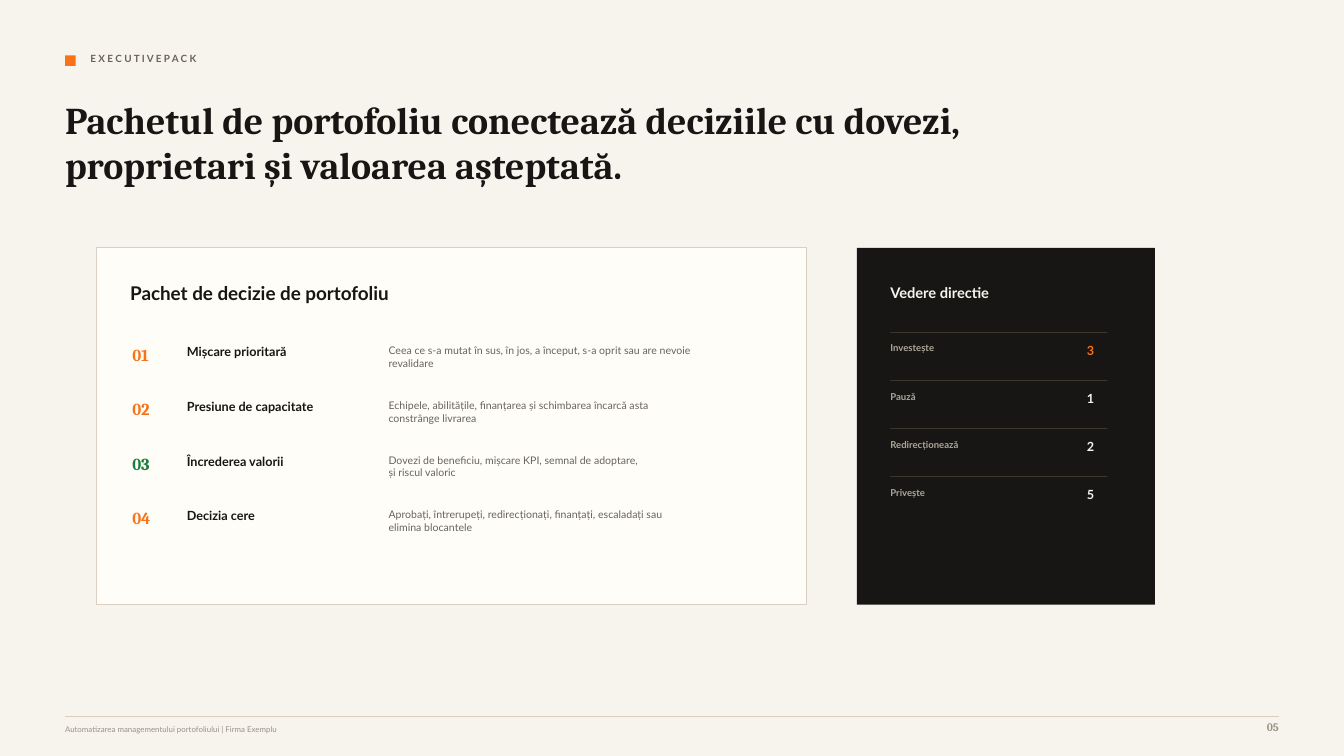
from lxml.etree import SubElement
from pptx import Presentation
from pptx.dml.color import RGBColor
from pptx.enum.shapes import MSO_CONNECTOR, MSO_SHAPE
from pptx.enum.text import MSO_ANCHOR, MSO_AUTO_SIZE, PP_ALIGN
from pptx.oxml.ns import qn
from pptx.util import Pt

PAPER = RGBColor(0xF7, 0xF4, 0xEE)
CARD = RGBColor(0xFF, 0xFD, 0xF8)
INK = RGBColor(0x17, 0x16, 0x14)
ORANGE = RGBColor(0xF9, 0x73, 0x16)
GREEN = RGBColor(0x15, 0x80, 0x3D)
BROWN = RGBColor(0x69, 0x63, 0x5A)
SAND = RGBColor(0xD9, 0xD0, 0xC3)
UMBER = RGBColor(0x3C, 0x36, 0x2E)
STONE = RGBColor(0xAF, 0xA7, 0x9B)
TAUPE = RGBColor(0x9A, 0x91, 0x84)
SERIF, SANS = "Cambria", "Lato"

WIDTH, HEIGHT = 960, 540
EDGE = 46.5

STEPS = [
    ("01", ORANGE, "Mișcare prioritară",
     ["Ceea ce s-a mutat în sus, în jos, a început, s-a oprit sau are nevoie", "revalidare"]),
    ("02", ORANGE, "Presiune de capacitate",
     ["Echipele, abilitățile, finanțarea și schimbarea încarcă asta", "constrânge livrarea"]),
    ("03", GREEN, "Încrederea valorii",
     ["Dovezi de beneficiu, mișcare KPI, semnal de adoptare,", "și riscul valoric"]),
    ("04", ORANGE, "Decizia cere",
     ["Aprobați, întrerupeți, redirecționați, finanțați, escaladați sau", "elimina blocantele"]),
]
COUNTS = [
    ("Investește", "3", ORANGE),
    ("Pauză", "1", PAPER),
    ("Redirecționează", "2", PAPER),
    ("Privește", "5", PAPER),
]


def fill_text(shape, lines, size, color, font=SANS, bold=True, align=PP_ALIGN.LEFT):
    """Write one paragraph per line into an inset-free frame."""
    frame = shape.text_frame
    frame.word_wrap = True
    frame.auto_size = MSO_AUTO_SIZE.NONE
    frame.vertical_anchor = MSO_ANCHOR.TOP
    frame.margin_left = frame.margin_right = 0
    frame.margin_top = frame.margin_bottom = 0
    for i, line in enumerate(lines):
        para = frame.add_paragraph() if i else frame.paragraphs[0]
        para.alignment = align
        run = para.add_run()
        run.text = line
        run.font.name = font
        run.font.size = Pt(size)
        run.font.bold = bold
        run.font.color.rgb = color


def add_text(slide, box, lines, size, color, **style):
    shape = slide.shapes.add_textbox(*map(Pt, box))
    fill_text(shape, lines, size, color, **style)


def add_rect(slide, box, fill, line=None):
    rect = slide.shapes.add_shape(MSO_SHAPE.RECTANGLE, *map(Pt, box))
    rect.shadow.inherit = False
    rect.fill.solid()
    rect.fill.fore_color.rgb = fill
    if line is None:
        rect.line.fill.background()
    else:
        rect.line.color.rgb = line
        rect.line.width = Pt(0.75)


def add_rule(slide, left, top, width, color):
    rule = slide.shapes.add_connector(
        MSO_CONNECTOR.STRAIGHT, Pt(left), Pt(top), Pt(left + width), Pt(top))
    rule.line.color.rgb = color
    rule.line.width = Pt(0.75)
    SubElement(rule._element.spPr, qn("a:effectLst"))


def add_head(slide, box):
    left, top, width, height = box
    add_rect(slide, (left, top + 2.2, 7.5, 7.5), ORANGE)
    add_text(slide, (left + 18, top, 420, 13.5), ["E X E C U T I V E P A C K"], 7.1, BROWN)
    title = slide.shapes.title
    title.left, title.top = Pt(left), Pt(top + 31.7)
    title.width, title.height = Pt(width), Pt(height - 31.7)
    fill_text(title, ["Pachetul de portofoliu conectează deciziile cu dovezi, "
                      "proprietari și valoarea așteptată."], 27, INK, font=SERIF)


def add_steps(slide, box):
    left, top, width, height = box
    add_rect(slide, box, CARD, SAND)
    add_text(slide, (left + 24, top + 24, 225, 18),
             ["Pachet de decizie de portofoliu"], 13.5, INK)
    for i, (number, color, name, lines) in enumerate(STEPS):
        y = top + 69 + 39 * i
        add_text(slide, (left + 25.5, y, 25, 18), [number], 12, color, font=SERIF)
        add_text(slide, (left + 64.5, y, 130, 13.5), [name], 9, INK)
        add_text(slide, (left + 208.5, y, 240, 22.5), lines, 7.5, BROWN, bold=False)


def add_counts(slide, box):
    left, top, width, height = box
    add_rect(slide, box, INK)
    add_text(slide, (left + 24, top + 25.5, 120, 15), ["Vedere directie"], 10.5, PAPER)
    for i, (name, count, color) in enumerate(COUNTS):
        y = top + 60.2 + 34.5 * i
        add_rule(slide, left + 24, y, 155, UMBER)
        add_text(slide, (left + 24, y + 7.4, 69, 12), [name], 6.8, STONE)
        add_text(slide, (left + 138, y + 7.4, 31.5, 12), [count], 9, color,
                 align=PP_ALIGN.RIGHT)


def add_foot(slide, box):
    left, top, width, height = box
    add_rule(slide, left, top, width, SAND)
    add_text(slide, (left, top + 6.1, 570, 10.5),
             ["Automatizarea managementului portofoliului | Firma Exemplu"],
             5.6, TAUPE, bold=False)
    add_text(slide, (left + width - 36, top + 3.1, 36, 13.5), ["05"], 8.2, TAUPE,
             font=SERIF, align=PP_ALIGN.RIGHT)


def main():
    deck = Presentation()
    deck.slide_width, deck.slide_height = Pt(WIDTH), Pt(HEIGHT)
    slide = deck.slides.add_slide(deck.slide_layouts[5])
    slide.background.fill.solid()
    slide.background.fill.fore_color.rgb = PAPER
    add_head(slide, (EDGE, 37.4, 675, 105))
    add_steps(slide, (69, 177, 507, 255))
    add_counts(slide, (612, 177, 213, 255))
    add_foot(slide, (EDGE, 511.6, WIDTH - 2 * EDGE, 20))
    deck.save("out.pptx")


if __name__ == "__main__":
    main()
